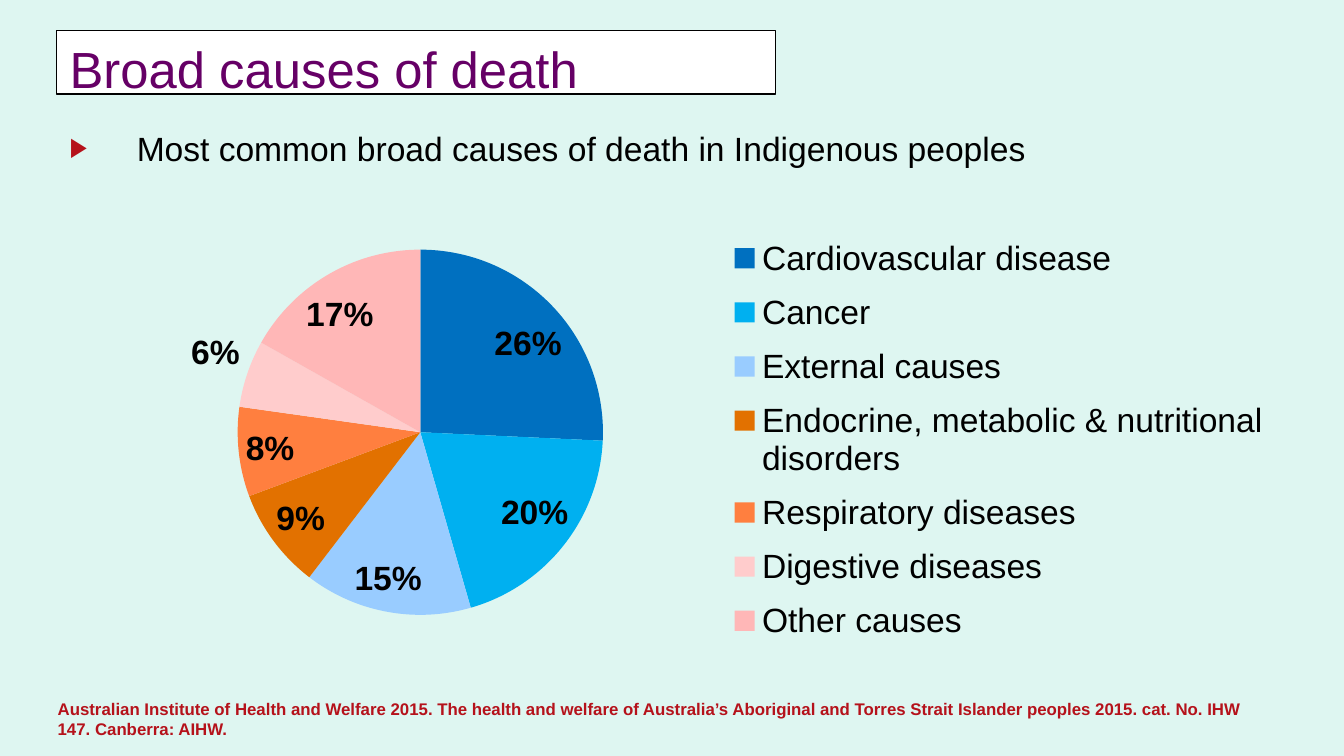
from lxml import etree
from pptx import Presentation
from pptx.chart.data import CategoryChartData
from pptx.dml.color import RGBColor
from pptx.enum.chart import XL_CHART_TYPE, XL_LABEL_POSITION, XL_LEGEND_POSITION
from pptx.enum.shapes import MSO_SHAPE
from pptx.enum.text import MSO_ANCHOR, PP_ALIGN
from pptx.oxml import parse_xml
from pptx.oxml.ns import nsdecls, qn
from pptx.util import Pt

PIE = XL_CHART_TYPE.PIE
FIT = XL_LABEL_POSITION.BEST_FIT
RIGHT = XL_LEGEND_POSITION.RIGHT
RECT = MSO_SHAPE.RECTANGLE
TOP = MSO_ANCHOR.TOP
LEFT = PP_ALIGN.LEFT

HEAD = "Broad causes of death"
POINT = "Most common broad causes of death in Indigenous peoples"
CITE = (
    "Australian Institute of Health and Welfare 2015. The health and welfare of "
    "Australia’s Aboriginal and Torres Strait Islander peoples 2015. cat. No. IHW "
    "147. Canberra: AIHW."
)
CAUSES = [
    ("Cardiovascular disease", 26, "0070C0"),
    ("Cancer", 20, "00B0F0"),
    ("External causes", 15, "99CCFF"),
    ("Endocrine, metabolic & nutritional disorders", 9, "E27100"),
    ("Respiratory diseases", 8, "FF7F3F"),
    ("Digestive diseases", 6, "FFCCCC"),
    ("Other causes", 17, "FFB7B7"),
]

THEME = {
    "font": "Arial",
    "back": "DEF6F1",
    "box": "FFFFFF",
    "ink": "000000",
    "plum": "660066",
    "red": "B5121B",
    "head": 27.2,
    "body": 18,
    "cite": 9,
}
SIZE = (720, 405)
PLACE = {
    "head": (30.2, 16.5, 385.2, 33.9),
    "point": (30.2, 64.8, 545.8, 36),
    "chart": (36, 106.6, 652.3, 257.8),
    "cite": (23.8, 370.8, 654.5, 30.2),
}
PLOT = (0.14, 0.1, 0.3, 0.77)
KEY = (0.54, 0.05, 0.45, 0.9)


def tint(name):
    return RGBColor.from_string(THEME.get(name, name))


def spot(name):
    return [Pt(n) for n in PLACE[name]]


def style(item, values):
    for name, value in values.items():
        setattr(item, name, value)


def dress(font, size, color, bold=False):
    style(font, {"name": THEME["font"], "size": Pt(THEME[size]), "bold": bold})
    font.color.rgb = tint(color)


def write(shape, text, size, color, gap, bold=False):
    frame = shape.text_frame
    style(frame, {"word_wrap": True, "vertical_anchor": TOP})
    para = frame.paragraphs[0]
    style(para, {"alignment": LEFT, "space_before": Pt(gap)})
    run = para.add_run()
    run.text = text
    dress(run.font, size, color, bold)
    return para


def mark(para):
    props = para._p.get_or_add_pPr()
    props.set("marL", str(Pt(36)))
    props.set("indent", str(-Pt(36)))
    color = etree.SubElement(props, qn("a:buClr"))
    etree.SubElement(color, qn("a:srgbClr"), val=THEME["red"])
    etree.SubElement(props, qn("a:buSzPct"), val="80000")
    etree.SubElement(props, qn("a:buFont"), typeface=THEME["font"])
    etree.SubElement(props, qn("a:buChar"), char="▶")


def layout(box, inner=False):
    rows = [("layoutTarget", "inner")] if inner else []
    rows += [("xMode", "edge"), ("yMode", "edge")] + list(zip("xywh", box))
    body = "".join(f'<c:{tag} val="{value}"/>' for tag, value in rows)
    return parse_xml(
        f'<c:layout {nsdecls("c")}><c:manualLayout>{body}</c:manualLayout></c:layout>'
    )


def draw(slide):
    data = CategoryChartData()
    data.categories = [name for name, _, _ in CAUSES]
    data.add_series("Series 1", [value for _, value, _ in CAUSES])
    chart = slide.shapes.add_chart(PIE, *spot("chart"), data).chart
    style(chart, {"has_title": False, "has_legend": True})
    dress(chart.font, "body", "ink")
    style(chart.legend, {"position": RIGHT, "include_in_layout": False})
    dress(chart.legend.font, "body", "ink")

    plot = chart.plots[0]
    style(plot, {"vary_by_categories": True, "has_data_labels": True})
    tags = plot.data_labels
    style(tags, {
        "show_value": False,
        "show_percentage": True,
        "number_format": "0%",
        "number_format_is_linked": False,
        "position": FIT,
    })
    dress(tags.font, "body", "ink", True)
    for i, (_, _, color) in enumerate(CAUSES):
        part = plot.series[0].points[i].format
        part.fill.solid()
        part.fill.fore_color.rgb = tint(color)
        part.line.fill.background()

    root = chart._chartSpace
    area = root.find(".//" + qn("c:plotArea"))
    for old in area.findall(qn("c:layout")):
        area.remove(old)
    area.insert(0, layout(PLOT, True))
    key = root.find(".//" + qn("c:legend"))
    for old in key.findall(qn("c:layout")):
        key.remove(old)
    key.find(qn("c:legendPos")).addnext(layout(KEY))


def main():
    deck = Presentation()
    deck.slide_width, deck.slide_height = [Pt(n) for n in SIZE]
    slide = deck.slides.add_slide(deck.slide_layouts[6])
    fill = slide.background.fill
    fill.solid()
    fill.fore_color.rgb = tint("back")

    shapes = slide.shapes
    mark(write(shapes.add_textbox(*spot("point")), POINT, "body", "ink", 1))
    box = shapes.add_shape(RECT, *spot("head"))
    box.shadow.inherit = False
    box.fill.solid()
    box.fill.fore_color.rgb = tint("box")
    box.line.color.rgb = tint("ink")
    box.line.width = Pt(0.75)
    write(box, HEAD, "head", "plum", 3)
    draw(slide)
    write(shapes.add_textbox(*spot("cite")), CITE, "cite", "red", 0.5, True)
    deck.save("out.pptx")


if __name__ == "__main__":
    main()
